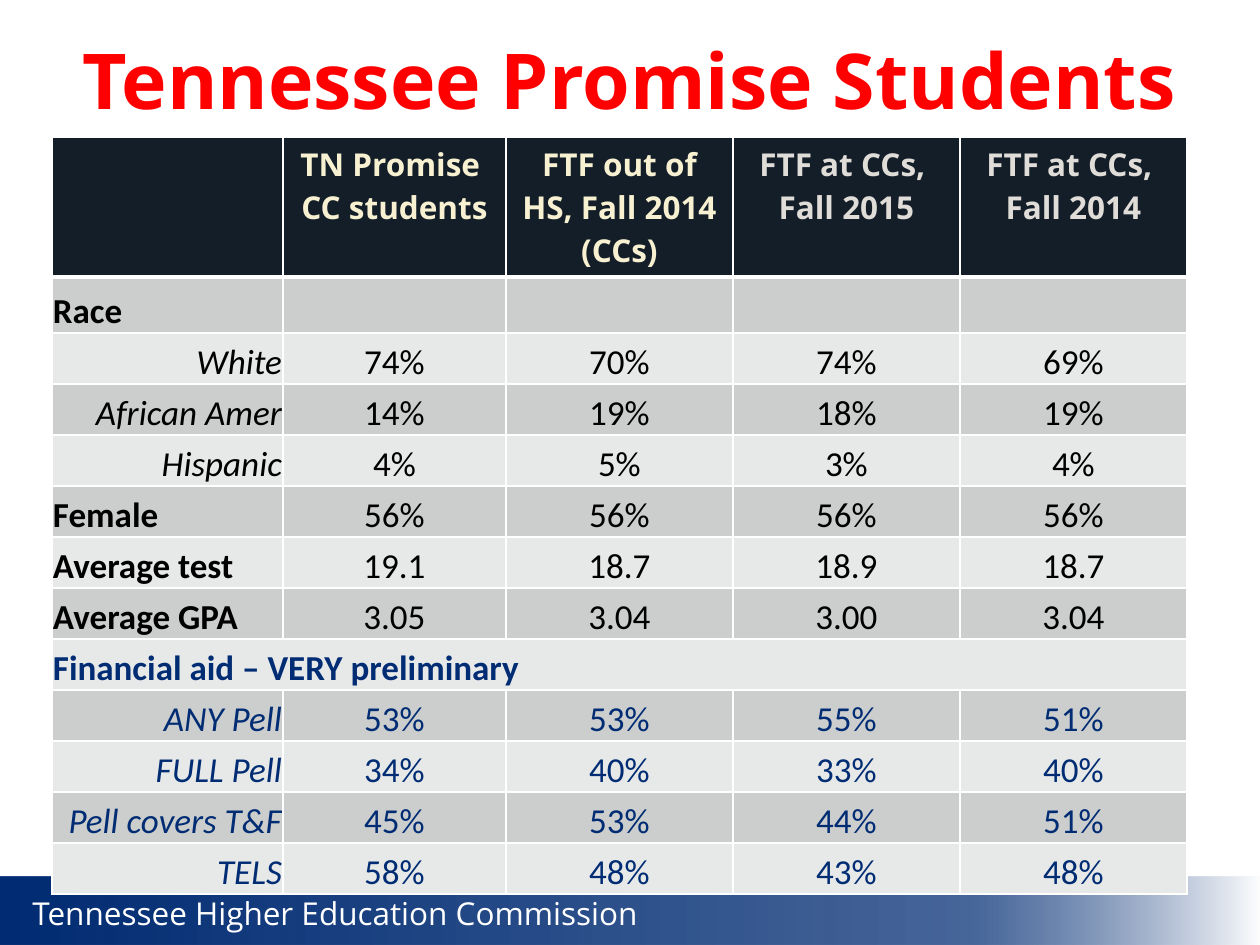
from lxml import etree
from pptx import Presentation
from pptx.dml.color import RGBColor
from pptx.enum.shapes import MSO_SHAPE
from pptx.enum.text import MSO_ANCHOR, PP_ALIGN
from pptx.oxml import parse_xml
from pptx.oxml.ns import nsdecls, qn
from pptx.util import Emu, Pt

PX = 914400 / 126
LEFT, CENTER, RIGHT = PP_ALIGN.LEFT, PP_ALIGN.CENTER, PP_ALIGN.RIGHT
TOP, MIDDLE, BOTTOM = MSO_ANCHOR.TOP, MSO_ANCHOR.MIDDLE, MSO_ANCHOR.BOTTOM
RECTANGLE = MSO_SHAPE.RECTANGLE

NAVY, WHITE, BLACK, RED = "002C73", "FFFFFF", "000000", "FF0000"
HEADER_FILL, CREAM, PALE_GREY = "131E29", "F7F0D1", "E0DCD7"
BANDS = ["CCCDCD", "E7E8E8"]

COLUMN_WIDTHS = [231, 223, 227, 227, 227]
HEADER_HEIGHT, FIRST_HEIGHT, ROW_HEIGHT = 140, 56, 51
HEADERS = [
    ("", CREAM),
    ("TN Promise \nCC students", CREAM),
    ("FTF out of HS, Fall 2014 (CCs)", CREAM),
    ("FTF at CCs, \nFall 2015", PALE_GREY),
    ("FTF at CCs, \nFall 2014", PALE_GREY),
]
MAIN, SUB = {"bold": True}, {"italic": True}
ROWS = [
    ("Race", MAIN, BLACK, []),
    ("White", SUB, BLACK, ["74%", "70%", "74%", "69%"]),
    ("African Amer", SUB, BLACK, ["14%", "19%", "18%", "19%"]),
    ("Hispanic", SUB, BLACK, ["4%", "5%", "3%", "4%"]),
    ("Female", MAIN, BLACK, ["56%", "56%", "56%", "56%"]),
    ("Average test", MAIN, BLACK, ["19.1", "18.7", "18.9", "18.7"]),
    ("Average GPA", MAIN, BLACK, ["3.05", "3.04", "3.00", "3.04"]),
    ("Financial aid – VERY preliminary", MAIN, NAVY, None),
    ("ANY Pell", SUB, NAVY, ["53%", "53%", "55%", "51%"]),
    ("FULL Pell", SUB, NAVY, ["34%", "40%", "33%", "40%"]),
    ("Pell covers T&F", SUB, NAVY, ["45%", "53%", "44%", "51%"]),
    ("TELS", SUB, NAVY, ["58%", "48%", "43%", "48%"]),
]


def px(length):
    return Emu(round(length * PX))


def rgb(color):
    return RGBColor.from_string(color)


def write(frame, text, color, align=LEFT, **font):
    frame.text = text
    for para in frame.paragraphs:
        para.alignment = align
        for span in para.runs:
            span.font.color.rgb = rgb(color)
            for name, value in font.items():
                setattr(span.font, name, value)


def add_text(page, box, text, color, anchor=TOP, wrap=True, **style):
    frame = page.shapes.add_textbox(*map(px, box)).text_frame
    frame.word_wrap = wrap
    frame.vertical_anchor = anchor
    write(frame, text, color, name="Open Sans", **style)


def add_footer(page, box):
    """Draw the fading band and the name of the commission on it."""
    left, top, width, height = box
    band = page.shapes.add_shape(RECTANGLE, *map(px, box))
    band.shadow.inherit = False
    band.line.fill.background()
    band.fill.gradient()
    band.fill.gradient_angle = 0
    stops = band.fill._fill._gradFill.find(qn("a:gsLst"))
    for stop in list(stops):
        stops.remove(stop)
    for position, color, alpha in [(0, NAVY, 100), (77, NAVY, 72), (100, WHITE, 100)]:
        stops.append(parse_xml(
            f'<a:gs {nsdecls("a")} pos="{position * 1000}"><a:srgbClr val="{color}">'
            f'<a:alpha val="{alpha * 1000}"/></a:srgbClr></a:gs>'))
    add_text(page, (left + 20, top + 11, 636, 50),
             "Tennessee Higher Education Commission", WHITE, wrap=False, size=Pt(18))


def style_cell(cell, fill, top=1, bottom=1):
    """Set the fill and the white borders, with widths in points."""
    properties = cell._tc.get_or_add_tcPr()
    for side, width in {"L": 1, "R": 1, "T": top, "B": bottom}.items():
        line = etree.SubElement(properties, qn(f"a:ln{side}"), w=str(Pt(width)))
        solid = etree.SubElement(line, qn("a:solidFill"))
        etree.SubElement(solid, qn("a:srgbClr"), val=WHITE)
    cell.fill.solid()
    cell.fill.fore_color.rgb = rgb(fill)


def write_body_cell(cell, text, color, align, **font):
    margins = {"margin_left": px(1), "margin_right": px(1),
               "margin_top": px(1), "margin_bottom": 0}
    for name, value in margins.items():
        setattr(cell, name, value)
    cell.vertical_anchor = BOTTOM
    write(cell.text_frame, text, color, align, name="Calibri", size=Pt(20), **font)


def add_student_table(page, left, top):
    heights = [HEADER_HEIGHT, FIRST_HEIGHT] + [ROW_HEIGHT] * (len(ROWS) - 1)
    box = (left, top, sum(COLUMN_WIDTHS), sum(heights))
    table = page.shapes.add_table(len(heights), len(COLUMN_WIDTHS), *map(px, box)).table
    for column, width in zip(table.columns, COLUMN_WIDTHS):
        column.width = px(width)
    for row, height in zip(table.rows, heights):
        row.height = px(height)

    for index, (text, color) in enumerate(HEADERS):
        cell = table.cell(0, index)
        style_cell(cell, HEADER_FILL, bottom=3)
        write(cell.text_frame, text, color, CENTER,
              name="Open Sans", size=Pt(18), bold=True)

    for index, (label, font, color, values) in enumerate(ROWS, 1):
        cells = list(table.rows[index].cells)
        for cell in cells:
            style_cell(cell, BANDS[(index - 1) % 2], top=3 if index == 1 else 1)
        if values is None:
            cells[0].merge(cells[-1])
        font = {"bold": False, "italic": False} | font
        write_body_cell(cells[0], label, color, RIGHT if font["italic"] else LEFT, **font)
        for cell, value in zip(cells[1:], values or []):
            write_body_cell(cell, value, color, CENTER, bold=False)


def main():
    deck = Presentation()
    deck.slide_width, deck.slide_height = px(1260), px(945)
    page = deck.slides.add_slide(deck.slide_layouts[6])
    add_footer(page, (0, 877, 1262, 68))
    add_text(page, (63, 0, 1134, 158), "Tennessee Promise Students", RED,
             anchor=MIDDLE, align=CENTER, size=Pt(44), bold=True)
    add_student_table(page, 52, 137)
    deck.save("out.pptx")


if __name__ == "__main__":
    main()
